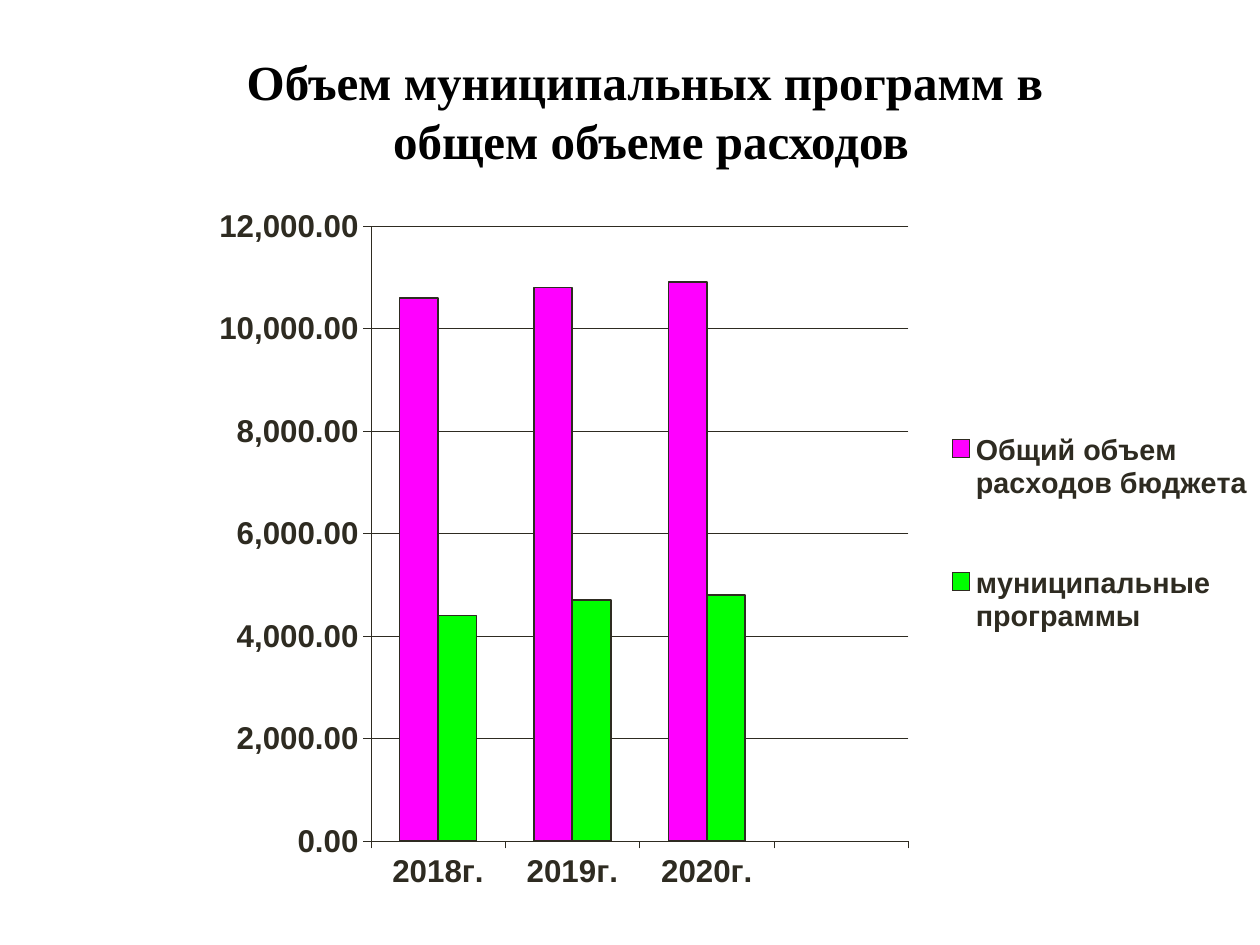
from lxml.etree import SubElement
from pptx import Presentation
from pptx.chart.data import CategoryChartData as Data
from pptx.dml.color import RGBColor
from pptx.enum.chart import XL_CHART_TYPE as Kind, XL_LEGEND_POSITION as Side
from pptx.enum.chart import XL_TICK_LABEL_POSITION as Label, XL_TICK_MARK as Tick
from pptx.enum.text import MSO_ANCHOR as Anchor, PP_ALIGN as Align
from pptx.oxml.ns import qn
from pptx.util import Pt

TITLE = "Объем муниципальных программ в \nобщем объеме расходов"
YEARS = ["2018г.", "2019г.", "2020г.", ""]
ROWS = [
    ("Общий объем расходов бюджета", (10600, 10800, 10900, None), "FF00FF"),
    ("муниципальные программы", (4400, 4700, 4800, None), "00FF00"),
]
INK = "2E2B21"
PLOT = (0.14, 0.05, 0.52, 0.83)
KEY = (0.69, 0.24, 0.31, 0.45)


def paint(color, code):
    color.rgb = RGBColor.from_string(code)


def style(font, face, size, code):
    font.name, font.size, font.bold = face, Pt(size), True
    paint(font.color, code)


def stroke(line, width):
    line.width = Pt(width)
    paint(line.color, INK)


def arrange(part, box, inner=False):
    old = part.find(qn("c:layout"))
    if old is not None:
        part.remove(old)
    layout = SubElement(part, qn("c:layout"))
    part.remove(layout)
    spot = 0 if inner else 1
    part.insert(spot, layout)
    manual = SubElement(layout, qn("c:manualLayout"))
    marks = [("layoutTarget", "inner")] if inner else []
    marks += [("xMode", "edge"), ("yMode", "edge")]
    marks += zip("xywh", box)
    for tag, val in marks:
        SubElement(manual, qn("c:" + tag)).set("val", str(val))


deck = Presentation()
deck.slide_width, deck.slide_height = Pt(720), Pt(540)
slide = deck.slides.add_slide(deck.slide_layouts[5])

title = slide.shapes.title
title.left, title.top, title.width, title.height = Pt(48), Pt(18), Pt(648), Pt(90)
frame = title.text_frame
frame.text = TITLE
frame.word_wrap = True
frame.vertical_anchor = Anchor.MIDDLE
for para in frame.paragraphs:
    para.alignment = Align.CENTER
    for run in para.runs:
        style(run.font, "Times New Roman", 28, "000000")

data = Data()
data.categories = YEARS
for name, vals, code in ROWS:
    data.add_series(name, vals)
chart = slide.shapes.add_chart(
    Kind.COLUMN_CLUSTERED, Pt(125.3), Pt(108), Pt(594.7), Pt(423.4), data
).chart
style(chart.font, "Arial", 18, INK)
chart.has_title = False

plot = chart.plots[0]
plot.gap_width, plot.overlap = 150, 0
plot.vary_by_categories = False
for bar, (name, vals, code) in zip(plot.series, ROWS):
    bar.format.fill.solid()
    paint(bar.format.fill.fore_color, code)
    bar.invert_if_negative = False
    stroke(bar.format.line, 1)

years, scale = chart.category_axis, chart.value_axis
for axis in (years, scale):
    axis.major_tick_mark, axis.minor_tick_mark = Tick.OUTSIDE, Tick.NONE
    style(axis.tick_labels.font, "Arial", 18, INK)
    stroke(axis.format.line, 0.25)
years.tick_label_position = Label.LOW
scale.minimum_scale, scale.maximum_scale, scale.major_unit = 0, 12000, 2000
scale.tick_labels.number_format = "#,##0.00"
scale.tick_labels.number_format_is_linked = False
stroke(scale.major_gridlines.format.line, 0.25)

chart.has_legend = True
legend = chart.legend
legend.position, legend.include_in_layout = Side.RIGHT, False
style(legend.font, "Arial", 16.5, INK)
area = chart.element.find(".//" + qn("c:plotArea"))
arrange(area, PLOT, True)
arrange(chart.element.find(".//" + qn("c:legend")), KEY)

deck.save("out.pptx")
